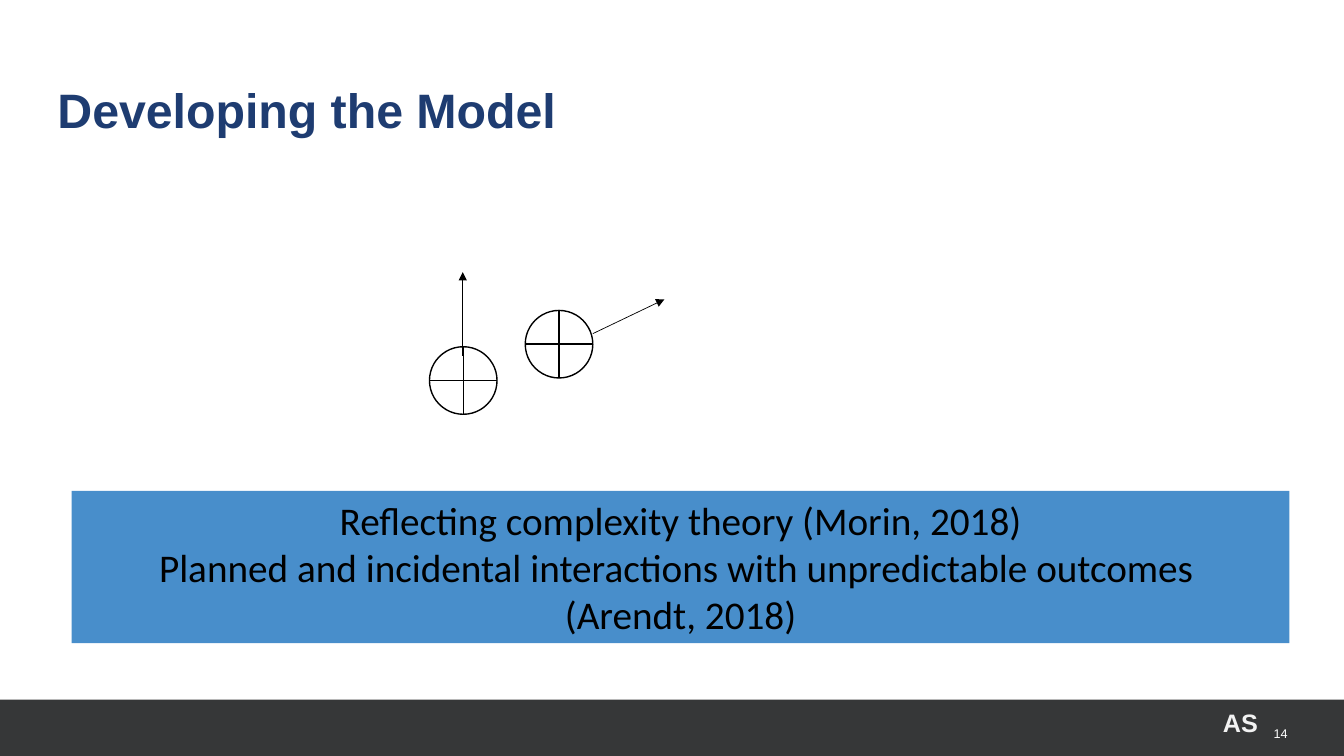
from dataclasses import dataclass

from lxml.etree import SubElement
from pptx import Presentation
from pptx.dml.color import RGBColor
from pptx.enum.shapes import MSO_CONNECTOR, MSO_SHAPE
from pptx.enum.text import MSO_ANCHOR, PP_ALIGN
from pptx.oxml.ns import qn
from pptx.util import Inches, Pt


@dataclass(frozen=True)
class Theme:
    heading_font: str = "Arial"
    body_font: str = "Calibri"
    navy: str = "1E3C71"
    blue: str = "488ECB"
    charcoal: str = "363738"
    black: str = "000000"
    white: str = "FFFFFF"
    pale: str = "F2F2F2"
    title_size: float = 34.5
    body_size: float = 28
    initials_size: float = 18
    number_size: float = 9


THEME = Theme()
PAGE_WIDTH, PAGE_HEIGHT = 13.33, 7.5


def color(code):
    return RGBColor.from_string(code)


def add_shape(page, kind, box, fill=None, line=None):
    shape = page.shapes.add_shape(kind, *map(Inches, box))
    shape.shadow.inherit = False
    if fill:
        shape.fill.solid()
        shape.fill.fore_color.rgb = color(fill)
    else:
        shape.fill.background()
    if line:
        shape.line.color.rgb = color(line)
        shape.line.width = Pt(1)
    else:
        shape.line.fill.background()
    return shape


def write(shape, lines, font, size, ink, bold=False, align=PP_ALIGN.LEFT,
          anchor=MSO_ANCHOR.TOP, spacing=None, flush=False):
    frame = shape.text_frame
    frame.word_wrap = True
    frame.vertical_anchor = anchor
    if flush:
        frame.margin_left = frame.margin_right = 0
        frame.margin_top = frame.margin_bottom = 0
    frame.text = "\n".join(lines)
    for para in frame.paragraphs:
        para.alignment = align
        if spacing:
            para.line_spacing = Pt(spacing)
        para.font.name = font
        para.font.size = Pt(size)
        para.font.bold = bold
        para.font.color.rgb = color(ink)


def add_text(page, box, text, *style, **layout):
    write(page.shapes.add_textbox(*map(Inches, box)), [text], *style, **layout)


def add_arrow(page, start, end):
    arrow = page.shapes.add_connector(
        MSO_CONNECTOR.STRAIGHT, *map(Inches, start + end))
    arrow.line.color.rgb = color(THEME.black)
    arrow.line.width = Pt(0.5)
    SubElement(arrow.line._get_or_add_ln(), qn("a:tailEnd"), type="triangle")
    SubElement(arrow._element.spPr, qn("a:effectLst"))


def add_footer(page, left, top, width, height):
    add_shape(page, MSO_SHAPE.RECTANGLE, (left, top, width, height),
              THEME.charcoal)
    right = left + width
    add_text(page, (right - 1.11, top, 0.55, 0.55), "14", THEME.heading_font,
             THEME.number_size, THEME.white, align=PP_ALIGN.RIGHT,
             anchor=MSO_ANCHOR.MIDDLE, spacing=19, flush=True)
    add_text(page, (right - 1.3, top + 0.03, 0.62, 0.4), "AS",
             THEME.heading_font, THEME.initials_size, THEME.pale, bold=True)


def add_title(page, *box):
    add_text(page, box, "Developing the Model", THEME.heading_font,
             THEME.title_size, THEME.navy, bold=True, spacing=32.5, flush=True)


def add_model(page, left, top):
    # Two crossed circles, each with an arrow showing its direction
    size = 0.67
    circles = [
        ((0.95, 0.38), (1.62, 0.61), (2.33, 0.27)),
        ((0, 0.74), (0.33, 0.83), (0.33, 0)),
    ]
    for corner, start, end in circles:
        corner, start, end = [(left + x, top + y)
                              for x, y in (corner, start, end)]
        add_shape(page, MSO_SHAPE.FLOWCHART_OR, corner + (size, size),
                  line=THEME.black)
        add_arrow(page, start, end)


def add_theory_panel(page, *box):
    panel = add_shape(page, MSO_SHAPE.RECTANGLE, box, THEME.blue)
    lines = [
        "Reflecting complexity theory (Morin, 2018)",
        "Planned and incidental interactions with unpredictable outcomes ",
        "(Arendt, 2018)",
    ]
    write(panel, lines, THEME.body_font, THEME.body_size, THEME.black,
          align=PP_ALIGN.CENTER)


def main():
    deck = Presentation()
    deck.slide_width = Inches(PAGE_WIDTH)
    deck.slide_height = Inches(PAGE_HEIGHT)
    page = deck.slides.add_slide(deck.slide_layouts[6])

    add_footer(page, 0, 6.94, PAGE_WIDTH, 0.57)
    add_title(page, 0.57, 0.92, 5.27, 0.79)
    add_model(page, 4.26, 2.7)
    add_theory_panel(page, 0.71, 4.87, 12.08, 1.51)

    deck.save("out.pptx")


if __name__ == "__main__":
    main()
